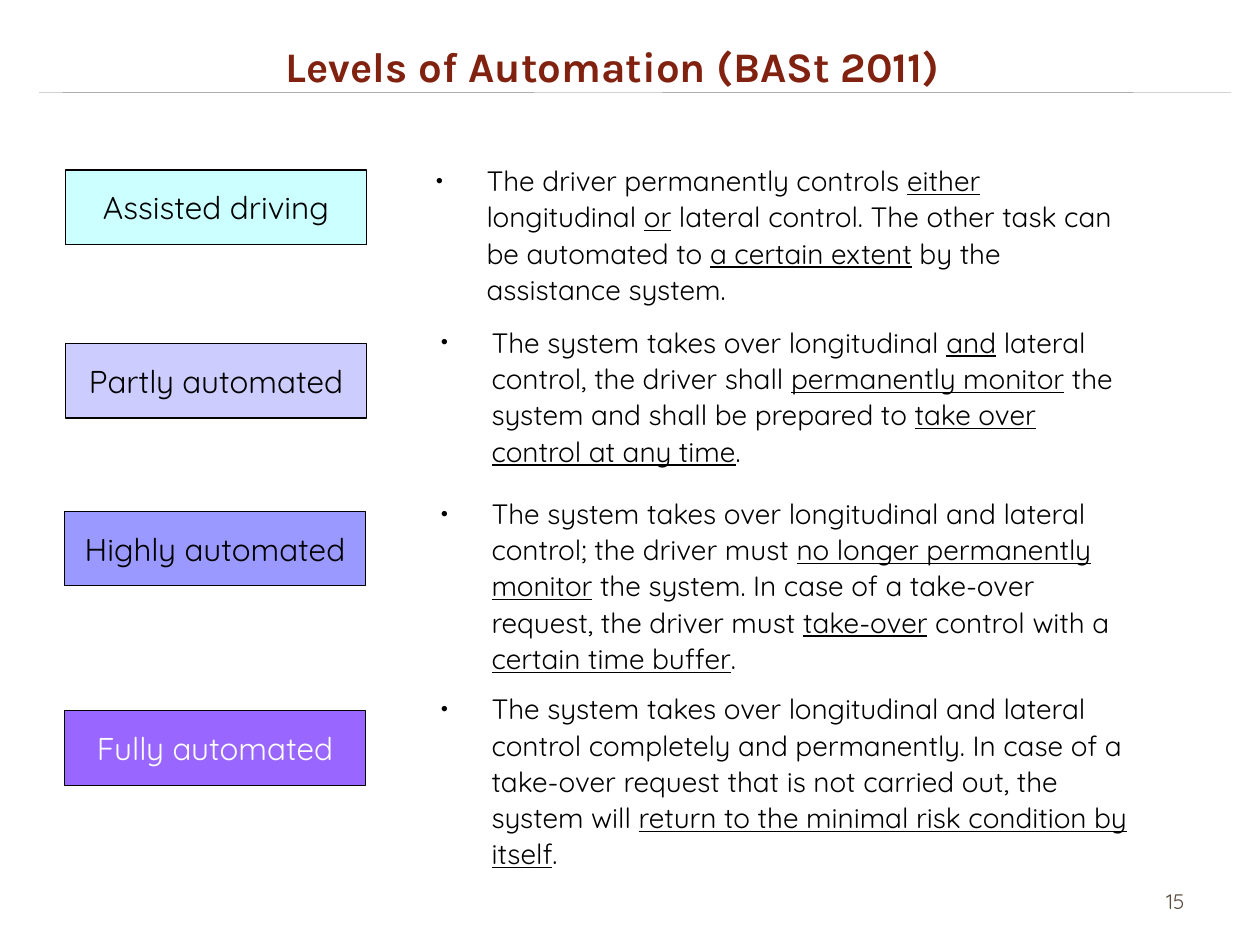
from lxml.etree import SubElement
from pptx import Presentation
from pptx.dml.color import RGBColor
from pptx.enum.shapes import MSO_CONNECTOR, MSO_SHAPE
from pptx.enum.text import MSO_ANCHOR, MSO_AUTO_SIZE, PP_ALIGN
from pptx.oxml.ns import qn
from pptx.util import Cm, Pt

BLACK = RGBColor(0x00, 0x00, 0x00)
WHITE = RGBColor(0xFF, 0xFF, 0xFF)
RED = RGBColor(0x81, 0x22, 0x10)
GREY = RGBColor(0x81, 0x82, 0x85)
BROWN = RGBColor(0x56, 0x4B, 0x3C)
AQUA = RGBColor(0xCC, 0xFF, 0xFF)
LILAC = RGBColor(0xCC, 0xCC, 0xFF)
BLUE = RGBColor(0x99, 0x99, 0xFF)
VIOLET = RGBColor(0x99, 0x66, 0xFF)
HEAD_FONT, BODY_FONT = "Karla", "Quicksand"

# Content: label, fill, label colour, (left, top) of label and of description,
# description height, all in cm, then the description; odd pieces are underlined
TITLE = "Levels of Automation (BASt 2011)"
PAGE_NUMBER = "15"
LEVELS = [
    ("Assisted driving", AQUA, BLACK, (1.32, 3.43), (8.79, 3.12), 2.46,
     ["The driver permanently controls ", "either", " longitudinal ", "or",
      " lateral control. The other task can be automated to ",
      "a certain extent", " by the assistance system."]),
    ("Partly automated", LILAC, BLACK, (1.32, 6.93), (8.89, 6.38), 3.2,
     ["The system takes over longitudinal ", "and",
      " lateral control, the driver shall ", "permanently monitor",
      " the system and shall be prepared to ",
      "take over control at any time", "."]),
    ("Highly automated", BLUE, BLACK, (1.3, 10.31), (8.89, 9.83), 3.94,
     ["The system takes over longitudinal and lateral control; the driver must ",
      "no longer permanently monitor",
      " the system. In case of a take-over request, the driver must ",
      "take-over", " control with a ", "certain time buffer", "."]),
    ("Fully automated", VIOLET, WHITE, (1.3, 14.33), (8.89, 13.77), 3.96,
     ["The system takes over longitudinal and lateral control completely and "
      "permanently. In case of a take-over request that is not carried out, "
      "the system will ",
      "return to the minimal risk condition by itself", "."]),
]
LABEL_SIZE = (6.07, 1.5)
TEXT_WIDTH = 14.12
INDENT = Cm(1.02)


def place(shape, left, top, width, height):
    shape.left, shape.top = Cm(left), Cm(top)
    shape.width, shape.height = Cm(width), Cm(height)


def add_span(para, text, size, color, font=BODY_FONT, bold=False, underline=False):
    span = para.add_run()
    span.text = text
    span.font.name, span.font.size = font, Pt(size)
    span.font.bold, span.font.underline = bold, underline
    span.font.color.rgb = color


def add_bullet(para):
    props = para._p.get_or_add_pPr()
    props.set("marL", str(INDENT))
    props.set("indent", str(-INDENT))
    SubElement(props, qn("a:buSzPct"), val="75000")
    SubElement(props, qn("a:buFont"), typeface=BODY_FONT)
    SubElement(props, qn("a:buChar"), char="•")


def add_label(page, text, fill, color, corner):
    box = page.shapes.add_shape(
        MSO_SHAPE.RECTANGLE, *map(Cm, corner + LABEL_SIZE))
    box.shadow.inherit = False
    box.fill.solid()
    box.fill.fore_color.rgb = fill
    box.line.color.rgb = BLACK
    box.line.width = Pt(0.75)
    frame = box.text_frame
    frame.word_wrap = False
    frame.vertical_anchor = MSO_ANCHOR.MIDDLE
    para = frame.paragraphs[0]
    para.alignment = PP_ALIGN.CENTER
    add_span(para, text, 18, color)


def add_description(page, corner, height, pieces):
    box = page.shapes.add_textbox(*map(Cm, corner + (TEXT_WIDTH, height)))
    frame = box.text_frame
    frame.word_wrap = True
    frame.auto_size = MSO_AUTO_SIZE.SHAPE_TO_FIT_TEXT
    frame.margin_left = 0
    para = frame.paragraphs[0]
    add_bullet(para)
    para.line_spacing = 1.08
    for number, piece in enumerate(pieces):
        add_span(para, piece, 16, BLACK, underline=number % 2 == 1)


def main():
    deck = Presentation()
    deck.slide_width, deck.slide_height = Cm(25.4), Cm(19.05)
    page = deck.slides.add_slide(deck.slide_layouts[5])

    # Title and the rule below it
    title = page.shapes.title
    place(title, 5.51, 0.69, 14.33, 1.27)
    frame = title.text_frame
    frame.word_wrap = False
    frame.auto_size = MSO_AUTO_SIZE.SHAPE_TO_FIT_TEXT
    frame.vertical_anchor = MSO_ANCHOR.TOP
    frame.paragraphs[0].alignment = PP_ALIGN.LEFT
    add_span(frame.paragraphs[0], TITLE, 24, RED, HEAD_FONT, bold=True)

    rule = page.shapes.add_connector(
        MSO_CONNECTOR.STRAIGHT, Cm(0.79), Cm(1.86), Cm(24.82), Cm(1.87))
    rule.line.color.rgb = GREY
    rule.line.width = Pt(0.25)
    SubElement(rule._element.spPr, qn("a:effectLst"))

    # Automation levels
    for label, fill, color, label_at, text_at, height, pieces in LEVELS:
        add_label(page, label, fill, color, label_at)
        add_description(page, text_at, height, pieces)

    # Page number
    box = page.shapes.add_textbox(Cm(18.21), Cm(17.65), Cm(5.92), Cm(1.02))
    box.text_frame.word_wrap = True
    box.text_frame.vertical_anchor = MSO_ANCHOR.MIDDLE
    para = box.text_frame.paragraphs[0]
    para.alignment = PP_ALIGN.RIGHT
    add_span(para, PAGE_NUMBER, 12, BROWN)

    deck.save("out.pptx")


if __name__ == "__main__":
    main()
